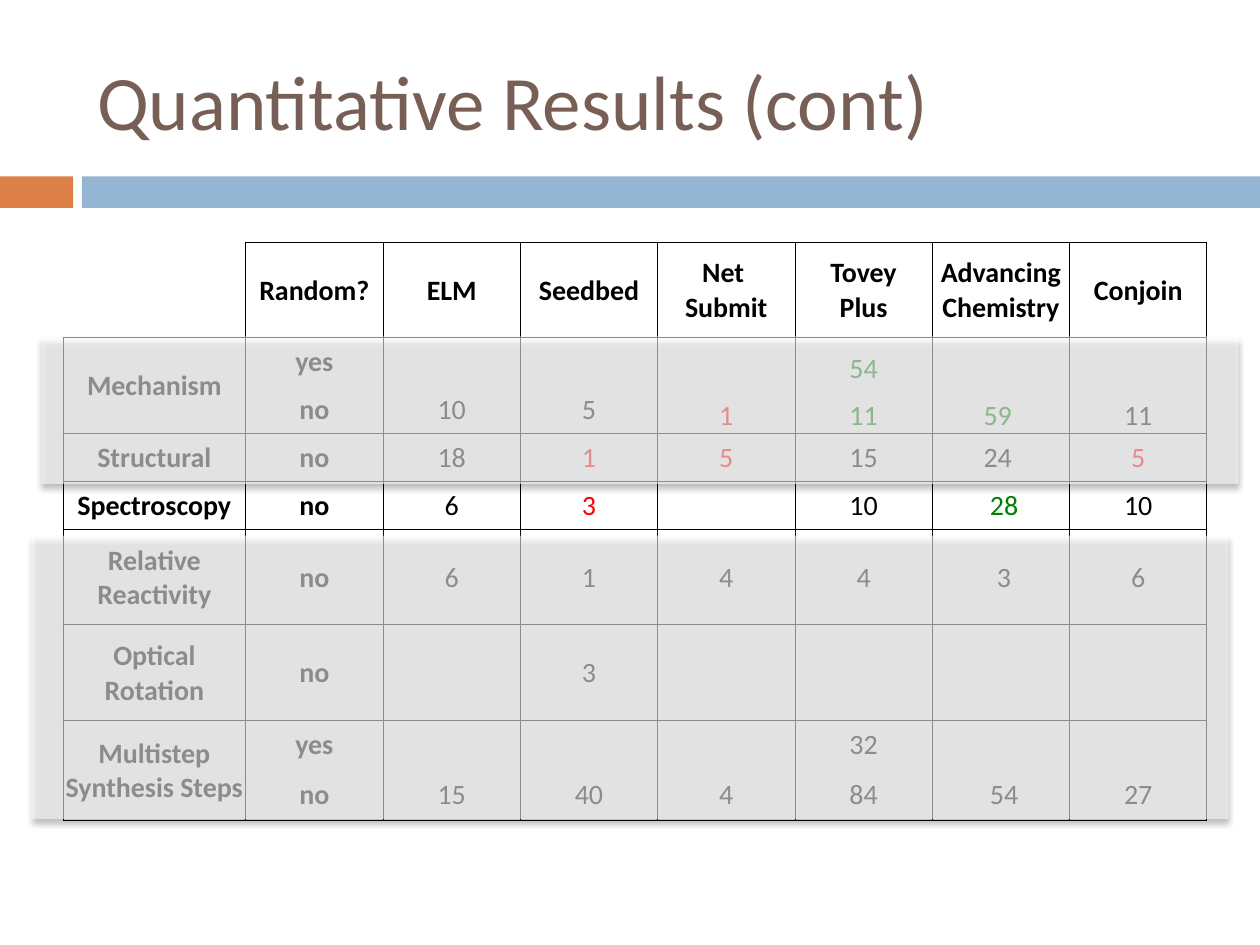
from lxml.etree import SubElement
from pptx import Presentation
from pptx.dml.color import RGBColor
from pptx.enum.shapes import MSO_SHAPE
from pptx.enum.text import MSO_ANCHOR, PP_ALIGN
from pptx.oxml.ns import qn
from pptx.util import Inches, Pt

BLACK, RED, GREEN = "000000", "FF0000", "008000"

# Content: a cell is a text, or a text with its colour
TITLE = "Quantitative Results (cont)"
ROWS = [
    ["", "Random?", "ELM", "Seedbed", "Net \nSubmit", "Tovey\nPlus", "Advancing Chemistry", "Conjoin"],
    ["Mechanism", "yes", "", "", "", ("54", GREEN), "", ""],
    ["", "no", "10", "5", ("1", RED), ("11", GREEN), ("59 ", GREEN), "11"],
    ["Structural", "no", "18", ("1", RED), ("5", RED), "15", "24 ", ("5", RED)],
    ["Spectroscopy", "no", "6", ("3", RED), "", "10", (" 28", GREEN), "10"],
    ["Relative Reactivity", "no", "6", "1", "4", "4", " 3", "6"],
    ["Optical Rotation", "no", "", "3", "", "", "", ""],
    ["Multistep Synthesis Steps", "yes", "", "", "", "32", "", ""],
    ["", "no", "15", "40", "4", "84", " 54", "27"],
]
COLUMN_WIDTHS = [1.45] + [1.09] * 7
ROW_HEIGHTS = [0.76, 0.38, 0.38, 0.38, 0.38, 0.76, 0.76, 0.38, 0.41]
PAIR_STARTS = (1, 7)  # rows that share a label with the row below
BOTTOM_CELLS = {(1, 5), (2, 4), (2, 5), (2, 6), (2, 7)}
BARS = [(0, 0.58, "DD8047"), (0.65, 9.35, "94B6D2")]
VEILS = [(0.25, 4.25, 9.5, 2.25), (0.33, 2.67, 9.5, 1.17)]


def rgb(value):
    return RGBColor.from_string(value)


def write(frame, text, size=16, color=BLACK, bold=False, align=PP_ALIGN.CENTER):
    for index, line in enumerate(text.split("\n")):
        para = frame.add_paragraph() if index else frame.paragraphs[0]
        para.alignment = align
        span = para.add_run()
        span.text = line
        span.font.name = "Calibri"
        span.font.size = Pt(size)
        span.font.bold = bold
        span.font.color.rgb = rgb(color)


def add_box(slide, left, top, width, height, color):
    box = slide.shapes.add_shape(
        MSO_SHAPE.RECTANGLE, Inches(left), Inches(top), Inches(width), Inches(height))
    box.shadow.inherit = False
    box.fill.solid()
    box.fill.fore_color.rgb = rgb(color)
    box.line.fill.background()
    return box


def add_color(parent, color, alpha=100):
    node = SubElement(SubElement(parent, qn("a:solidFill")), qn("a:srgbClr"), val=color)
    if alpha < 100:
        SubElement(node, qn("a:alpha"), val=str(alpha * 1000))


def set_borders(cell, hidden):
    properties = cell._tc.get_or_add_tcPr()
    for position, side in enumerate("LRTB"):
        line = SubElement(properties, qn(f"a:ln{side}"), w=str(Pt(0.5)))
        properties.insert(position, line)
        if side in hidden:
            SubElement(line, qn("a:noFill"))
        else:
            add_color(line, BLACK)


def hidden_sides(row, column):
    if (row, column) == (0, 0):
        return "LT"
    if row in PAIR_STARTS:
        return "B"
    if row - 1 in PAIR_STARTS:
        return "T"
    return ""


def add_results(slide):
    frame = slide.shapes.add_table(
        len(ROWS), len(COLUMN_WIDTHS), Inches(0.5), Inches(1.92),
        Inches(sum(COLUMN_WIDTHS)), Inches(sum(ROW_HEIGHTS)))
    table = frame.table
    table.first_row = table.horz_banding = False
    for column, width in zip(table.columns, COLUMN_WIDTHS):
        column.width = Inches(width)
    for row, height in zip(table.rows, ROW_HEIGHTS):
        row.height = Inches(height)
    for start in PAIR_STARTS:
        table.cell(start, 0).merge(table.cell(start + 1, 0))

    for r, values in enumerate(ROWS):
        for c, value in enumerate(values):
            text, color = value if isinstance(value, tuple) else (value, BLACK)
            cell = table.cell(r, c)
            cell.margin_left = cell.margin_right = cell.margin_top = Inches(0.01)
            cell.margin_bottom = 0
            cell.vertical_anchor = MSO_ANCHOR.BOTTOM if (r, c) in BOTTOM_CELLS else MSO_ANCHOR.MIDDLE
            cell.fill.background()
            set_borders(cell, hidden_sides(r, c) if c or r == 0 else "")
            if text:
                write(cell.text_frame, text, color=color, bold=r == 0 or c < 2)


def add_veil(slide, left, top, width, height):
    veil = add_box(slide, left, top, width, height, "FFFFFF")
    properties = veil._element.spPr
    fill_color = properties.find(qn("a:solidFill"))[0]
    SubElement(fill_color, qn("a:alpha"), val="55000")
    shadow = SubElement(
        properties.find(qn("a:effectLst")), qn("a:outerShdw"),
        blurRad=str(Pt(3)), dist=str(Pt(2.4)), dir="5400000", rotWithShape="0")
    node = SubElement(shadow, qn("a:srgbClr"), val=BLACK)
    SubElement(node, qn("a:alpha"), val="45000")


def main():
    deck = Presentation()
    deck.slide_width, deck.slide_height = Inches(10), Inches(7.5)
    slide = deck.slides.add_slide(deck.slide_layouts[5])

    # Coloured bars under the title
    for left, width, color in BARS:
        add_box(slide, left, 1.4, width, 0.25, color)

    # Title
    title = slide.shapes.title
    title.left, title.top = Inches(0.67), Inches(0.25)
    title.width, title.height = Inches(8.92), Inches(1.08)
    title.text_frame.vertical_anchor = MSO_ANCHOR.MIDDLE
    write(title.text_frame, TITLE, size=44, color="775F55", align=PP_ALIGN.LEFT)

    # Table, then the veils that leave one row in focus
    add_results(slide)
    for veil in VEILS:
        add_veil(slide, *veil)

    deck.save("out.pptx")


if __name__ == "__main__":
    main()
